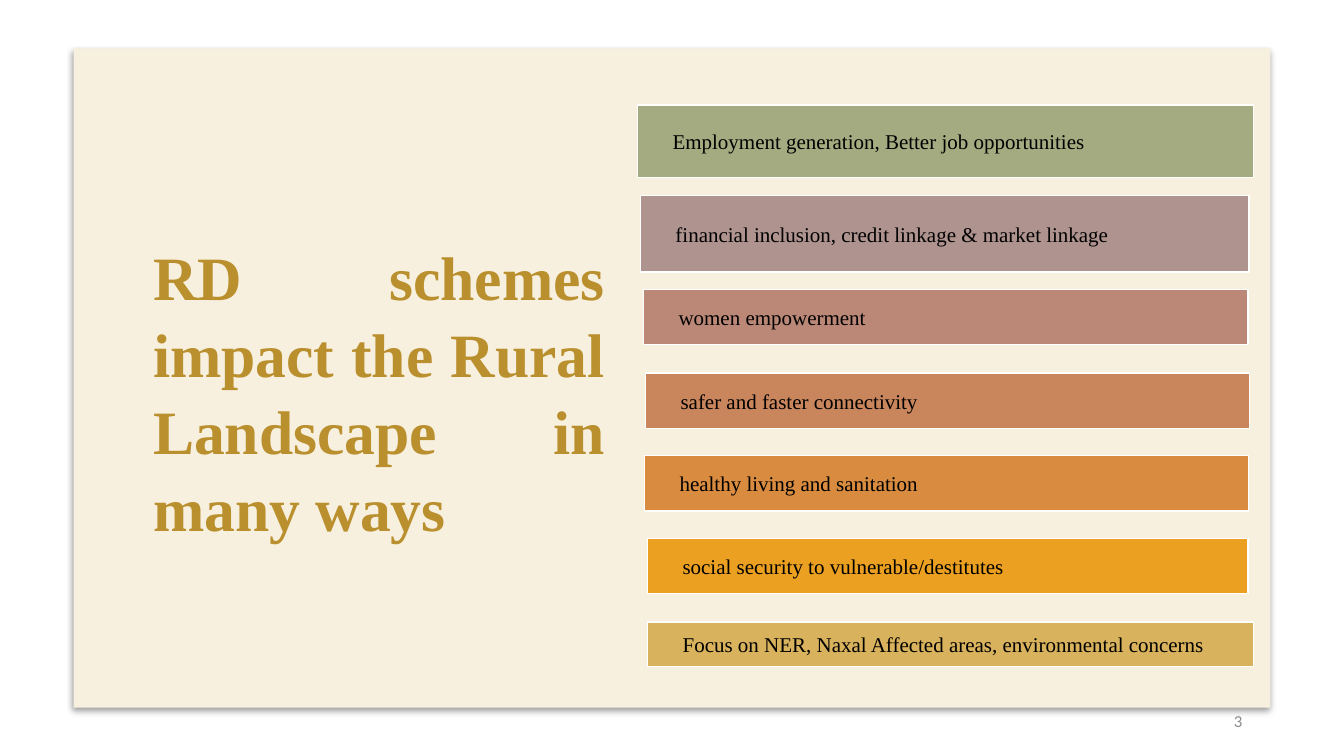
from lxml.etree import SubElement
from pptx import Presentation
from pptx.dml.color import RGBColor
from pptx.enum.shapes import MSO_SHAPE
from pptx.enum.text import MSO_ANCHOR, PP_ALIGN
from pptx.oxml.ns import qn
from pptx.util import Inches, Pt

COLORS = {
    "panel": "F7F0DE", "title": "BA8F2D", "number": "8C8C8C",
    "black": "000000", "white": "FFFFFF",
    "sage": "A5AB81", "mauve": "AF938F", "rose": "BB8776", "clay": "C9855C",
    "orange": "D98C3F", "amber": "EBA021", "sand": "D8B25C",
}
SERIF = "Times New Roman"


def add_box(left, top, width, height, fill):
    shape = slide.shapes.add_shape(
        MSO_SHAPE.RECTANGLE, Inches(left), Inches(top), Inches(width), Inches(height))
    shape.shadow.inherit = False
    shape.fill.solid()
    shape.fill.fore_color.rgb = RGBColor.from_string(COLORS[fill])
    shape.line.fill.background()
    return shape


def write_text(shape, text, size, color, font_name, alignment, bold=False):
    text_frame = shape.text_frame
    text_frame.word_wrap = True
    text_frame.vertical_anchor = MSO_ANCHOR.MIDDLE
    text_frame.text = text
    paragraph = text_frame.paragraphs[0]
    paragraph.alignment = alignment
    font = paragraph.runs[0].font
    font.name, font.size, font.bold = font_name, Pt(size), bold
    font.color.rgb = RGBColor.from_string(COLORS[color])
    return paragraph


presentation = Presentation()
presentation.slide_width, presentation.slide_height = Inches(13.33), Inches(7.5)
slide = presentation.slides.add_slide(presentation.slide_layouts[6])

# Background panel with a soft shadow below
panel = add_box(0.73, 0.48, 11.87, 6.54, "panel")
effects = panel._element.spPr.find(qn("a:effectLst"))
shadow = SubElement(effects, qn("a:outerShdw"), blurRad=str(Pt(4)), dist=str(Pt(3)),
                    dir="5400000", algn="t", rotWithShape="0")
shadow_color = SubElement(shadow, qn("a:srgbClr"), val=COLORS["black"])
SubElement(shadow_color, qn("a:alpha"), val="40000")

# Title
title = slide.shapes.add_textbox(Inches(1.42), Inches(1.13), Inches(4.68), Inches(5.48))
title_paragraph = write_text(title, "RD schemes impact the Rural Landscape in many ways",
                             44, "title", SERIF, PP_ALIGN.JUSTIFY, bold=True)
title_paragraph.line_spacing = 1.04

# Impact bars: left, top, width, height, fill, text
impacts = [
    (6.32, 1.04, 6.11, 0.72, "sage", "Employment generation, Better job opportunities"),
    (6.35, 1.94, 6.04, 0.76, "mauve", "financial inclusion, credit linkage & market linkage"),
    (6.38, 2.87, 6.00, 0.55, "rose", "women empowerment"),
    (6.40, 3.70, 5.99, 0.55, "clay", "safer and faster connectivity"),
    (6.39, 4.52, 5.99, 0.55, "orange", "healthy living and sanitation"),
    (6.42, 5.34, 5.96, 0.55, "amber", "social security to vulnerable/destitutes"),
    (6.42, 6.17, 6.01, 0.44, "sand",
     "Focus on NER, Naxal Affected areas, environmental concerns"),
]
for left, top, width, height, fill, text in impacts:
    bar = add_box(left, top, width, height, fill)
    bar.line.color.rgb = RGBColor.from_string(COLORS["white"])
    bar.line.width = Pt(1)
    text_frame = bar.text_frame
    text_frame.margin_left = Inches(0.35)
    text_frame.margin_top = text_frame.margin_right = text_frame.margin_bottom = Inches(0.04)
    write_text(bar, text, 15, "black", SERIF, PP_ALIGN.LEFT)

# Slide number
number = slide.shapes.add_textbox(Inches(9.42), Inches(6.95), Inches(3), Inches(0.4))
write_text(number, "3", 12, "number", "Calibri", PP_ALIGN.RIGHT)

presentation.save("out.pptx")
